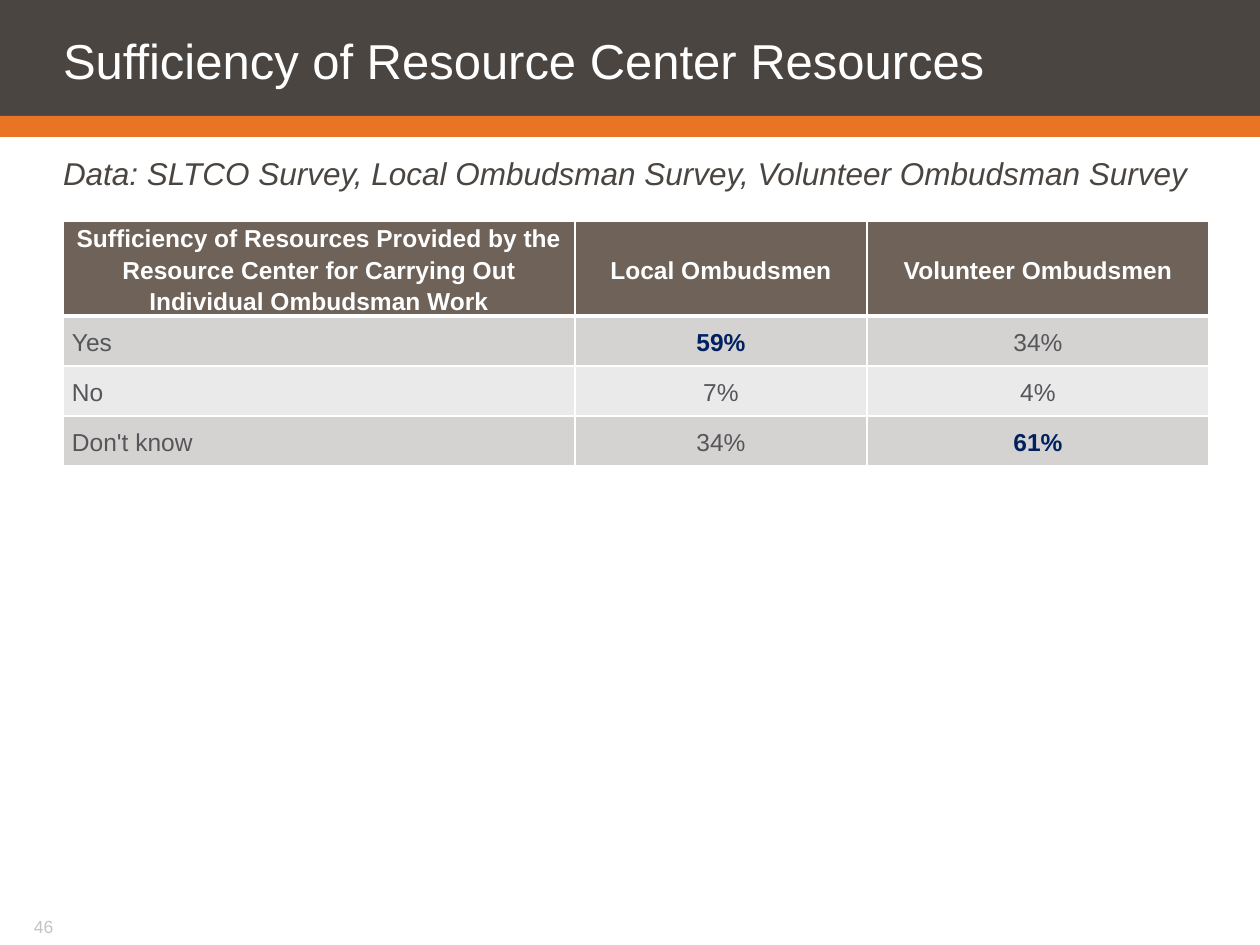
"""Build the slide on the sufficiency of Resource Center resources."""
from dataclasses import dataclass

from lxml import etree
from pptx import Presentation
from pptx import util as u
from pptx.dml.color import RGBColor
from pptx.enum import shapes, text
from pptx.oxml.ns import qn

SCALE = u.Inches(1) / 126


@dataclass(frozen=True)
class Theme:
    """Colours, type sizes and font of the slide."""

    font: str = "Arial"
    white: str = "FFFFFF"
    dark: str = "4A4541"
    accent: str = "E87424"
    header: str = "6E6259"
    bands: tuple = ("D5D3D1", "EBEAEA")
    body: str = "55565A"
    highlight: str = "002060"
    faint: str = "C8C2BF"
    title_size: int = 28
    source_size: int = 18
    table_size: int = 14
    number_size: int = 10


THEME = Theme()
COLUMNS = (512, 292, 342)
ROWS = (95, 50, 50, 50)
TABLE = (
    ("Sufficiency of Resources Provided by the Resource Center for Carrying Out "
     "Individual Ombudsman Work", "Local Ombudsmen", "Volunteer Ombudsmen"),
    ("Yes", "59%", "34%"),
    ("No", "7%", "4%"),
    ("Don't know", "34%", "61%"),
)
HIGHLIGHTS = ("59%", "61%")


def px(length):
    """Turn pixels into EMU."""
    return u.Emu(round(length * SCALE))


def place(shape, left, top, width, height):
    """Move and size a shape."""
    shape.left, shape.top = px(left), px(top)
    shape.width, shape.height = px(width), px(height)


def style(para, size, color, bold=False, italic=False):
    """Set the font of a paragraph."""
    font = para.font
    font.name, font.size = THEME.font, u.Pt(size)
    font.bold, font.italic = bold, italic
    font.color.rgb = RGBColor.from_string(color)


def fill_text(shape, words, insets, anchor=text.MSO_ANCHOR.TOP, wrap=True):
    """Write one left-aligned paragraph into a shape and return it."""
    frame = shape.text_frame
    frame.auto_size = text.MSO_AUTO_SIZE.NONE
    frame.word_wrap, frame.vertical_anchor = wrap, anchor
    frame.margin_left, frame.margin_top, frame.margin_right, frame.margin_bottom = map(px, insets)
    frame.text = words
    para = frame.paragraphs[0]
    para.alignment = text.PP_ALIGN.LEFT
    para.space_before = u.Pt(0)
    return para


def add_bar(page, order, top, height, color):
    """Add a full-width bar behind the placeholders."""
    bar = page.shapes.add_shape(shapes.MSO_SHAPE.RECTANGLE, 0, px(top), px(1260), px(height))
    bar.shadow.inherit = False
    bar.fill.solid()
    bar.fill.fore_color.rgb = RGBColor.from_string(color)
    bar.line.fill.background()
    page.shapes.element.insert(2 + order, bar.element)


def add_title(page, words):
    """Fill the title placeholder."""
    title = page.shapes.title
    place(title, 0, 0, 1260, 116)
    para = fill_text(title, words, (63, 13, 13, 0), text.MSO_ANCHOR.MIDDLE)
    para.line_spacing = u.Pt(THEME.title_size)
    style(para, THEME.title_size, THEME.white)


def add_source(page, words):
    """Fill the body placeholder with the data source."""
    body = page.placeholders[1]
    place(body, 0, 150, 1260, 42)
    para = fill_text(body, words, (63, 4, 0, 0))
    properties = para._p.get_or_add_pPr()
    properties.set("marL", "0")
    properties.set("indent", "0")
    etree.SubElement(properties, qn("a:buNone"))
    style(para, THEME.source_size, THEME.dark, italic=True)


def add_number(page, words):
    """Add the page number."""
    box = page.shapes.add_textbox(px(21), px(916), px(242), px(23))
    para = fill_text(box, words, (13, 0, 13, 6), wrap=False)
    style(para, THEME.number_size, THEME.faint)


def add_borders(cell, top, bottom):
    """Draw white cell borders, with widths in points."""
    properties = cell._tc.get_or_add_tcPr()
    for side, width in (("L", 1), ("R", 1), ("T", top), ("B", bottom)):
        line = etree.SubElement(properties, qn(f"a:ln{side}"), w=str(u.Pt(width)))
        solid = etree.SubElement(line, qn("a:solidFill"))
        etree.SubElement(solid, qn("a:srgbClr"), val=THEME.white)


def fill_cell(cell, words, row, column):
    """Write and format one table cell."""
    is_header, is_highlight = row == 0, words in HIGHLIGHTS
    add_borders(cell, 3 if row == 1 else 1, 3 if is_header else 1)
    cell.fill.solid()
    cell.fill.fore_color.rgb = RGBColor.from_string(
        THEME.header if is_header else THEME.bands[(row - 1) % 2])
    cell.margin_left = cell.margin_right = px(9)
    cell.margin_top = cell.margin_bottom = 0
    cell.vertical_anchor = text.MSO_ANCHOR.MIDDLE
    cell.text = words
    para = cell.text_frame.paragraphs[0]
    para.line_spacing = 1.15
    centred = is_header or column > 0
    para.alignment = text.PP_ALIGN.CENTER if centred else text.PP_ALIGN.LEFT
    color = THEME.white if is_header else THEME.highlight if is_highlight else THEME.body
    style(para, THEME.table_size, color, bold=is_header or is_highlight)


def add_table(page):
    """Add the table of survey answers."""
    frame = page.shapes.add_table(
        len(ROWS), len(COLUMNS), px(63), px(221), px(sum(COLUMNS)), px(sum(ROWS)))
    table = frame.table
    for column, width in zip(table.columns, COLUMNS):
        column.width = px(width)
    for row, height in zip(table.rows, ROWS):
        row.height = px(height)
    for row, answers in enumerate(TABLE):
        for column, words in enumerate(answers):
            fill_cell(table.cell(row, column), words, row, column)


def main():
    """Build and save the deck."""
    deck = Presentation()
    deck.slide_width, deck.slide_height = px(1260), px(945)
    page = deck.slides.add_slide(deck.slide_layouts[1])
    add_bar(page, 0, 0, 116, THEME.dark)
    add_bar(page, 1, 116, 21, THEME.accent)
    add_title(page, "Sufficiency of Resource Center Resources")
    add_source(page, "Data: SLTCO Survey, Local Ombudsman Survey, Volunteer Ombudsman Survey")
    add_table(page)
    add_number(page, "46")
    deck.save("out.pptx")


if __name__ == "__main__":
    main()
